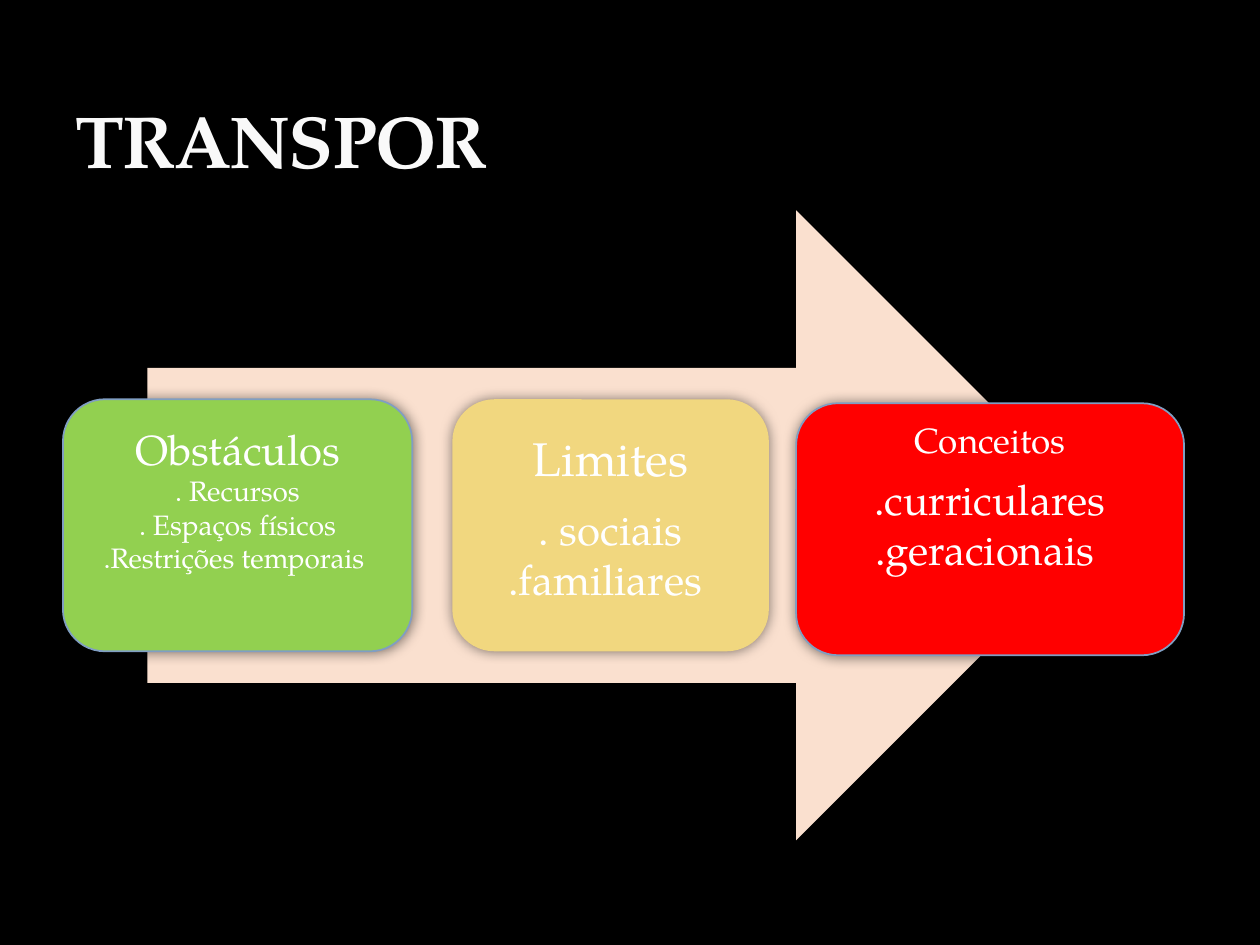
from lxml.etree import SubElement
from pptx import Presentation
from pptx.dml.color import RGBColor
from pptx.enum.shapes import MSO_SHAPE as Shape
from pptx.enum.text import MSO_ANCHOR as Anchor, PP_ALIGN as Align
from pptx.oxml.ns import qn
from pptx.util import Cm, Pt

FONT = "TeX Gyre Pagella"
CARD_HEIGHT = 5.08
BORDER = "809EC2"

# left, top, width, fill, border, top inset, heading size, heading gap, item size, lines
CARDS = [
    (1.27, 8.05, 7.04, "92D050", BORDER, 0.24, 24, 0, 16,
     ["Obstáculos", ". Recursos", ". Espaços físicos", ".Restrições temporais "]),
    (9.12, 8.05, 6.38, "F1D77F", None, 0.49, 27, 9.5, 24,
     ["Limites", ". sociais", ".familiares "]),
    (16.05, 8.13, 7.82, "FF0000", BORDER, 0.16, 20, 7, 24,
     ["Conceitos", ".curriculares", ".geracionais "]),
]


def color(value):
    return RGBColor.from_string(value)


def add_soft_shadow(shape):
    """Surround the shape with an even, half-transparent black blur."""
    shape.shadow.inherit = False
    effects = shape._element.spPr.find(qn("a:effectLst"))
    shadow = SubElement(effects, qn("a:outerShdw"), blurRad=str(Pt(7.5)),
                        dist="0", dir="0", algn="ctr", rotWithShape="0")
    black = SubElement(shadow, qn("a:srgbClr"), val="000000")
    SubElement(black, qn("a:alpha"), val="50000")


def add_block(page, kind, left, top, width, height, fill, border=None):
    block = page.shapes.add_shape(kind, Cm(left), Cm(top), Cm(width), Cm(height))
    block.fill.solid()
    block.fill.fore_color.rgb = color(fill)
    if border:
        block.line.color.rgb = color(border)
        block.line.width = Pt(1)
    else:
        block.line.fill.background()
    add_soft_shadow(block)
    return block


def style_font(para, size, text_color, bold=False):
    para.font.name = FONT
    para.font.size = Pt(size)
    para.font.bold = bold
    para.font.color.rgb = color(text_color)


def add_card(page, left, top, width, fill, border, inset, heading_size,
             heading_gap, item_size, lines):
    card = add_block(page, Shape.ROUNDED_RECTANGLE, left, top, width,
                     CARD_HEIGHT, fill, border)
    frame = card.text_frame
    frame.word_wrap = True
    frame.vertical_anchor = Anchor.TOP
    frame.margin_left = frame.margin_right = frame.margin_bottom = 0
    frame.margin_top = Cm(inset)
    for index, line in enumerate(lines):
        para = frame.paragraphs[0] if index == 0 else frame.add_paragraph()
        para.text = line
        para.alignment = Align.CENTER
        style_font(para, item_size if index else heading_size, "FFFFFF")
    if heading_gap:
        heading = frame.paragraphs[0]
        heading.line_spacing = 0.9
        heading.space_after = Pt(heading_gap)


def add_title(page, text):
    box = page.shapes.add_textbox(Cm(1.27), Cm(0.43), Cm(22.86), Cm(3.38))
    frame = box.text_frame
    frame.word_wrap = True
    frame.vertical_anchor = Anchor.BOTTOM
    para = frame.paragraphs[0]
    span = para.add_run()
    span.text = text
    span._r.get_or_add_rPr().set("spc", "-100")
    style_font(para, 42, "F9F9F9", bold=True)


def main():
    deck = Presentation()
    deck.slide_width, deck.slide_height = Cm(25.4), Cm(19.05)
    page = deck.slides.add_slide(deck.slide_layouts[6])
    page.background.fill.solid()
    page.background.fill.fore_color.rgb = color("000000")
    add_block(page, Shape.RIGHT_ARROW, 2.97, 4.24, 19.43, 12.7, "FAE0CF")
    for card in CARDS:
        add_card(page, *card)
    add_title(page, "TRANSPOR")
    deck.save("out.pptx")


if __name__ == "__main__":
    main()
